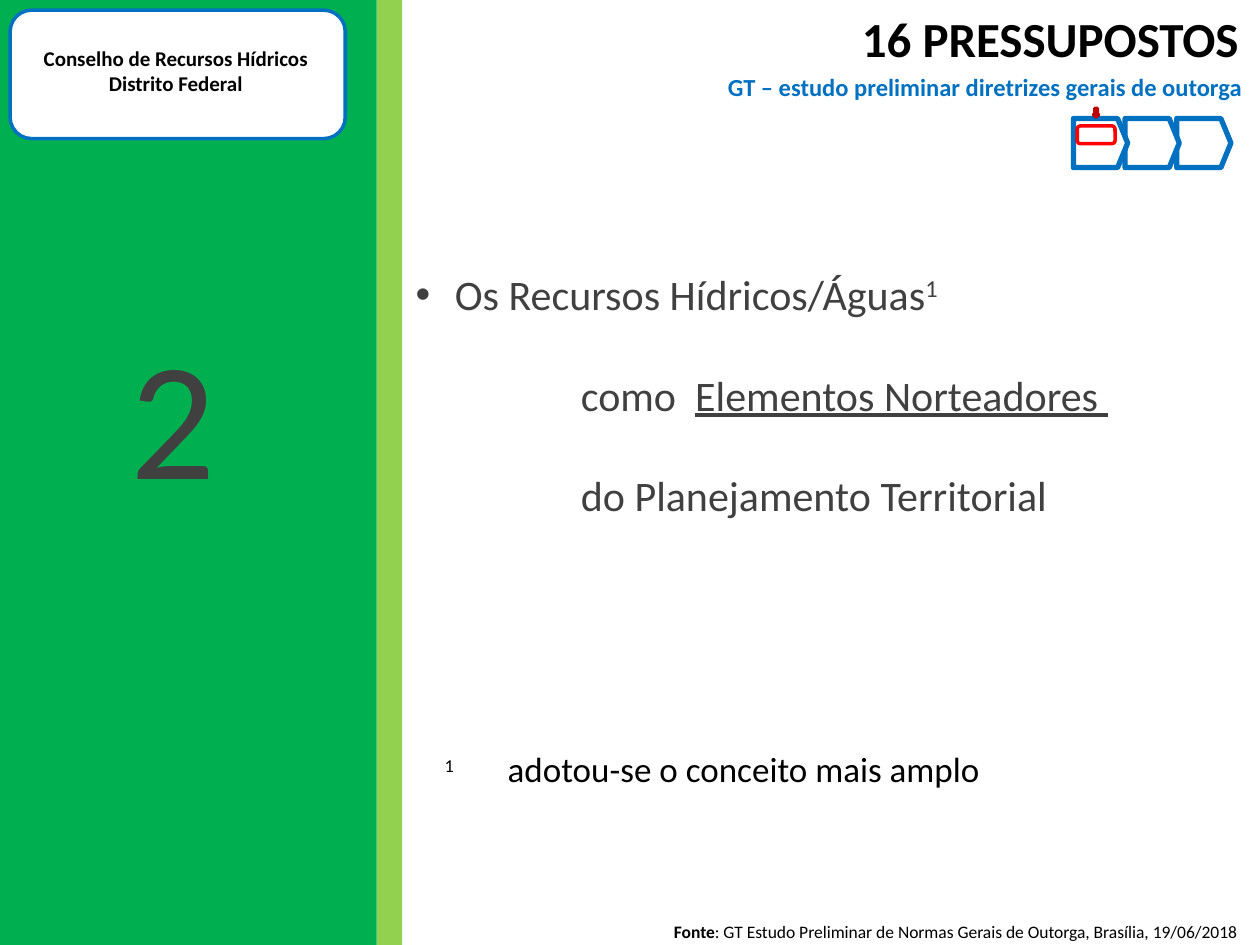
from lxml import etree
from pptx import Presentation
from pptx.dml.color import RGBColor
from pptx.enum.shapes import MSO_SHAPE
from pptx.enum.text import MSO_ANCHOR, MSO_AUTO_SIZE, PP_ALIGN
from pptx.oxml.ns import qn
from pptx.util import Pt

RECT, ROUNDED = MSO_SHAPE.RECTANGLE, MSO_SHAPE.ROUNDED_RECTANGLE
STAGE, ARROW = MSO_SHAPE.PENTAGON, MSO_SHAPE.DOWN_ARROW
LEFT, CENTER, RIGHT = PP_ALIGN.LEFT, PP_ALIGN.CENTER, PP_ALIGN.RIGHT
TOP, NO_FIT = MSO_ANCHOR.TOP, MSO_AUTO_SIZE.NONE

FONT = "Calibri"
COLORS = {
    "green": "00B050", "lime": "92D050", "blue": "0070C0", "white": "FFFFFF",
    "black": "000000", "gray": "404040", "red": "FF0000", "dark_red": "C00000",
}


def color(name):
    return RGBColor.from_string(COLORS[name])


def add_block(slide, kind, box, fill=None, line=None, weight=2):
    block = slide.shapes.add_shape(kind, *(Pt(length) for length in box))
    block.shadow.inherit = False
    if fill:
        block.fill.solid()
        block.fill.fore_color.rgb = color(fill)
    else:
        block.fill.background()
    if line:
        block.line.color.rgb = color(line)
        block.line.width = Pt(weight)
    else:
        block.line.fill.background()
    return block


def add_run(paragraph, text, size, ink, bold=False, underline=False, raised=False):
    run = paragraph.add_run()
    run.text = text
    font = run.font
    font.name, font.size, font.bold = FONT, Pt(size), bold
    font.underline = underline
    font.color.rgb = color(ink)
    if raised:
        run._r.get_or_add_rPr().set("baseline", "30000")


def prepare_frame(frame, align, wrap=False):
    frame.auto_size = NO_FIT
    frame.word_wrap = wrap
    frame.vertical_anchor = TOP
    frame.paragraphs[0].alignment = align
    return frame


def add_text(slide, box, align=LEFT, wrap=False):
    holder = slide.shapes.add_textbox(*(Pt(length) for length in box))
    return prepare_frame(holder.text_frame, align, wrap)


def add_side_panel(slide, box):
    left, top, width, height = box
    strip = 14.5
    add_block(slide, RECT, (left + width - strip, top, strip, height), "lime")
    add_block(slide, RECT, (left, top, width - strip, height), "green")
    add_block(slide, ROUNDED, (left + 5.8, top + 5.8, 191.5, 73.4), "white", "blue")

    council = add_text(slide, (left + 16.6, top + 22.3, 167.8, 36), CENTER)
    add_run(council.paragraphs[0], "Conselho de Recursos Hídricos", 12, "black", bold=True)
    district = council.add_paragraph()
    district.alignment = CENTER
    add_run(district, "Distrito Federal", 12, "black", bold=True)

    number = add_text(slide, (left + 67.7, top + 174.2, 63.4, 123.8))
    add_run(number.paragraphs[0], "2", 96, "gray")


def add_heading(slide, box):
    left, top, width, height = box
    title = slide.shapes.title
    title.left, title.top = Pt(left + 75.6), Pt(top)
    title.width, title.height = Pt(232.6), Pt(41)
    heading = prepare_frame(title.text_frame, RIGHT)
    add_run(heading.paragraphs[0], "16 PRESSUPOSTOS", 28, "black", bold=True)

    subtitle = add_text(slide, (left, top + 36, width, height - 36), RIGHT)
    add_run(subtitle.paragraphs[0], "GT – estudo preliminar diretrizes gerais de outorga",
            14, "blue", bold=True)


def add_progress(slide, box):
    left, top, width, height = box
    stage_width, step = 31, 29.5
    for index in reversed(range(3)):
        stage = add_block(slide, STAGE, (left + index * step, top + 5.8, stage_width, height - 5.8),
                          "white", "blue", 3)
        stage.adjustments[0] = 0.204
    add_block(slide, ARROW, (left + 11.5, top, 2.9, 5), "red", "dark_red")
    add_block(slide, ROUNDED, (left + 2.2, top + 10.1, 21.6, 10.1), line="red")


def add_statement(slide, box):
    body = add_text(slide, box, wrap=True)
    topic = body.paragraphs[0]
    properties = topic._p.get_or_add_pPr()
    properties.set("marL", str(Pt(22.5)))
    properties.set("indent", str(-Pt(22.5)))
    etree.SubElement(properties, qn("a:buFont")).set("typeface", "Arial")
    etree.SubElement(properties, qn("a:buChar")).set("char", "•")
    add_run(topic, "Os Recursos Hídricos/Águas", 24, "gray")
    add_run(topic, "1", 24, "gray", raised=True)

    for parts in ([("como  ", False), ("Elementos Norteadores ", True)],
                  [("do Planejamento Territorial", False)]):
        line = body.add_paragraph()
        line.space_before = Pt(28.8)
        line._p.get_or_add_pPr().set("marL", str(Pt(94.5)))
        for text, underline in parts:
            add_run(line, text, 24, "gray", underline=underline)


def add_footnote(slide, box):
    note = add_text(slide, box).paragraphs[0]
    add_run(note, "1 \t", 18, "black", raised=True)
    add_run(note, "adotou-se o conceito mais amplo", 20, "black")


def add_source(slide, box):
    source = add_text(slide, box).paragraphs[0]
    add_run(source, "Fonte", 10, "black", bold=True)
    add_run(source, ": GT Estudo Preliminar de Normas Gerais de Outorga, Brasília, 19/06/2018",
            10, "black")


def main():
    deck = Presentation()
    deck.slide_width, deck.slide_height = Pt(720), Pt(540)
    slide = deck.slides.add_slide(deck.slide_layouts[5])
    add_side_panel(slide, (0, 0, 229.8, 540))
    add_heading(slide, (406.8, 1.4, 310.3, 60.5))
    add_progress(slide, (613.4, 61.9, 90, 33.9))
    add_statement(slide, (230.4, 149.8, 489.6, 152.6))
    add_footnote(slide, (247, 423.4, 359.3, 31.7))
    add_source(slide, (378, 522.7, 342, 19.4))
    deck.save("out.pptx")


if __name__ == "__main__":
    main()
